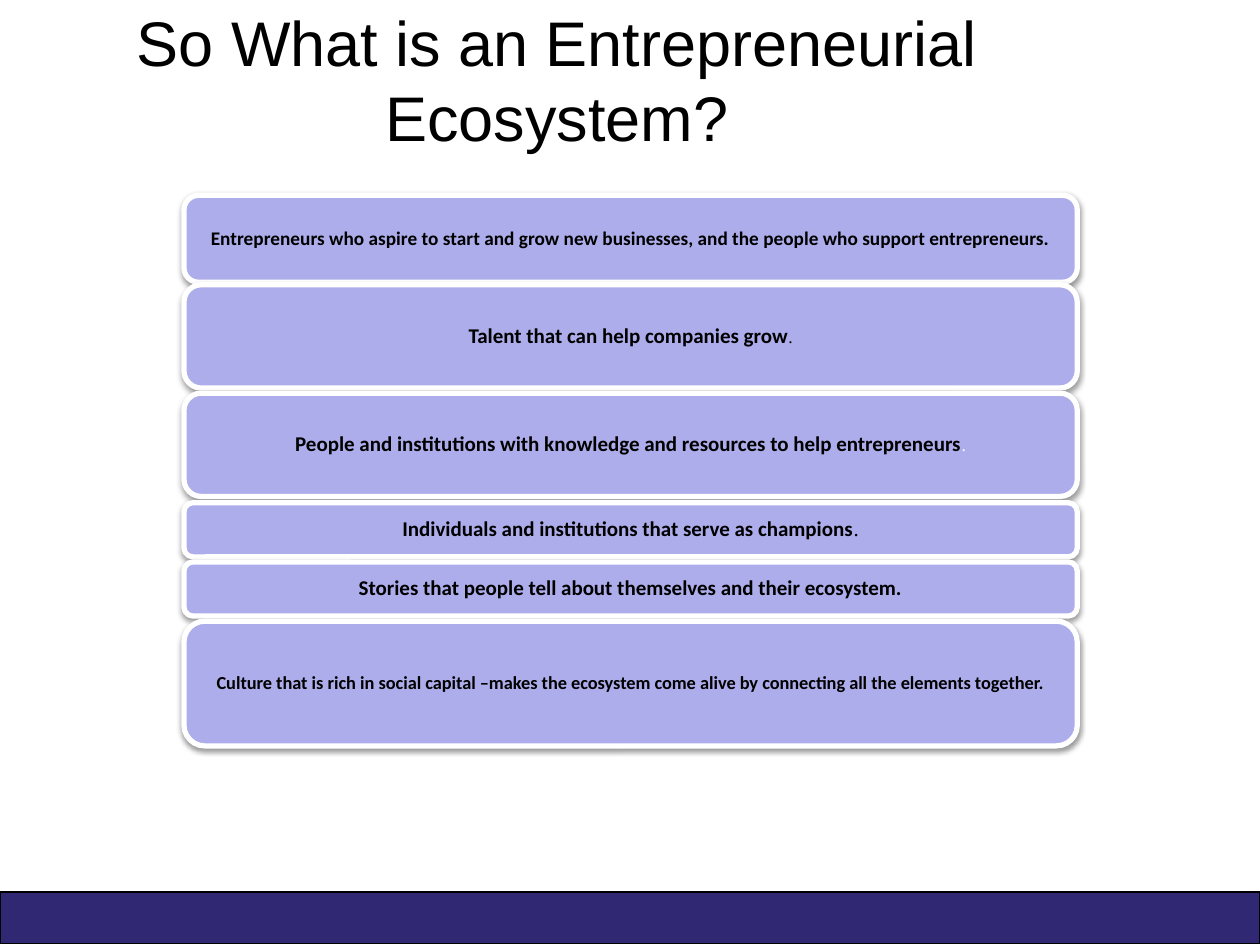
import pptx
import pptx.util
import pptx.oxml
import pptx.oxml.ns
from pptx.dml.color import RGBColor
from pptx.enum.shapes import MSO_SHAPE
from pptx.enum.text import MSO_ANCHOR, PP_ALIGN
from pptx.util import Inches

COLORS = {"band": "312873", "card": "ADADEB", "white": "FFFFFF", "black": "000000"}

# Top, height, text, text size, then the separate full stop as (size, colour)
CARDS = [
    (1.55, 0.69, "Entrepreneurs who aspire to start and grow new businesses, "
     "and the people who support entrepreneurs.", 11, None),
    (2.26, 0.82, "Talent that can help companies grow", 12, (10, "black")),
    (3.12, 0.82, "People and institutions with knowledge and resources "
     "to help entrepreneurs", 12, (10, "white")),
    (3.99, 0.43, "Individuals and institutions that serve as champions", 12,
     (12, "black")),
    (4.46, 0.43, "Stories that people tell about themselves and their ecosystem.",
     12, None),
    (4.93, 0.99, "Culture that is rich in social capital –makes the ecosystem "
     "come alive by connecting all the elements together.", 10.5, None),
]


def color(name):
    return RGBColor.from_string(COLORS[name])


def format_span(span, size, font, name, bold=False):
    span.font.size = pptx.util.Pt(size)
    span.font.name = font
    span.font.bold = bold
    span.font.color.rgb = color(name)


def add_box(page, kind, box, fill, line, width):
    shape = page.shapes.add_shape(kind, *(Inches(value) for value in box))
    shape.shadow.inherit = False
    shape.fill.solid()
    shape.fill.fore_color.rgb = color(fill)
    shape.line.color.rgb = color(line)
    shape.line.width = pptx.util.Pt(width)
    return shape


def add_soft_shadow(shape):
    """Fill the shape's empty effect list with a shadow falling straight down."""
    blur, distance = pptx.util.Pt(3.1), pptx.util.Pt(1.6)
    effects = shape._element.spPr.find(pptx.oxml.ns.qn("a:effectLst"))
    effects.append(pptx.oxml.parse_xml(
        f'<a:outerShdw {pptx.oxml.ns.nsdecls("a")} blurRad="{blur}" '
        f'dist="{distance}" dir="5400000" rotWithShape="0">'
        f'<a:srgbClr val="{COLORS["black"]}"><a:alpha val="38000"/></a:srgbClr>'
        '</a:outerShdw>'))


def place_title(page, box):
    title = page.shapes.title
    title.left, title.top, title.width, title.height = map(Inches, box)
    frame = title.text_frame
    frame.text = "So What is an Entrepreneurial Ecosystem?"
    frame.vertical_anchor = MSO_ANCHOR.MIDDLE
    para = frame.paragraphs[0]
    para.alignment = PP_ALIGN.CENTER
    format_span(para.runs[0], 36, "Arial", "black")


def add_card(page, box, text, size, stop):
    card = add_box(page, MSO_SHAPE.ROUNDED_RECTANGLE, box, "card", "white", 3)
    add_soft_shadow(card)
    frame = card.text_frame
    frame.word_wrap = True
    frame.vertical_anchor = MSO_ANCHOR.MIDDLE
    frame.margin_left = frame.margin_right = Inches(0.05)
    frame.margin_top = frame.margin_bottom = Inches(0.05)
    frame.text = text
    para = frame.paragraphs[0]
    para.alignment = PP_ALIGN.CENTER
    para.line_spacing = 0.9
    format_span(para.runs[0], size, "Calibri", "black", bold=True)
    if stop:
        span = para.add_run()
        span.text = "."
        format_span(span, stop[0], "Times New Roman", stop[1])


def add_card_stack(page, left, width):
    for top, height, text, size, stop in CARDS:
        add_card(page, (left, top, width, height), text, size, stop)


def main():
    deck = pptx.Presentation()
    deck.slide_width, deck.slide_height = Inches(10), Inches(7.5)
    page = deck.slides.add_slide(deck.slide_layouts.get_by_name("Title Only"))

    # Footer band, title, then the stack of elements
    add_box(page, MSO_SHAPE.RECTANGLE, (0, 7.08, 10, 0.41), "band", "black", 0.75)
    place_title(page, (0.17, 0, 8.5, 1.25))
    add_card_stack(page, 1.46, 7.09)
    deck.save("out.pptx")


if __name__ == "__main__":
    main()
